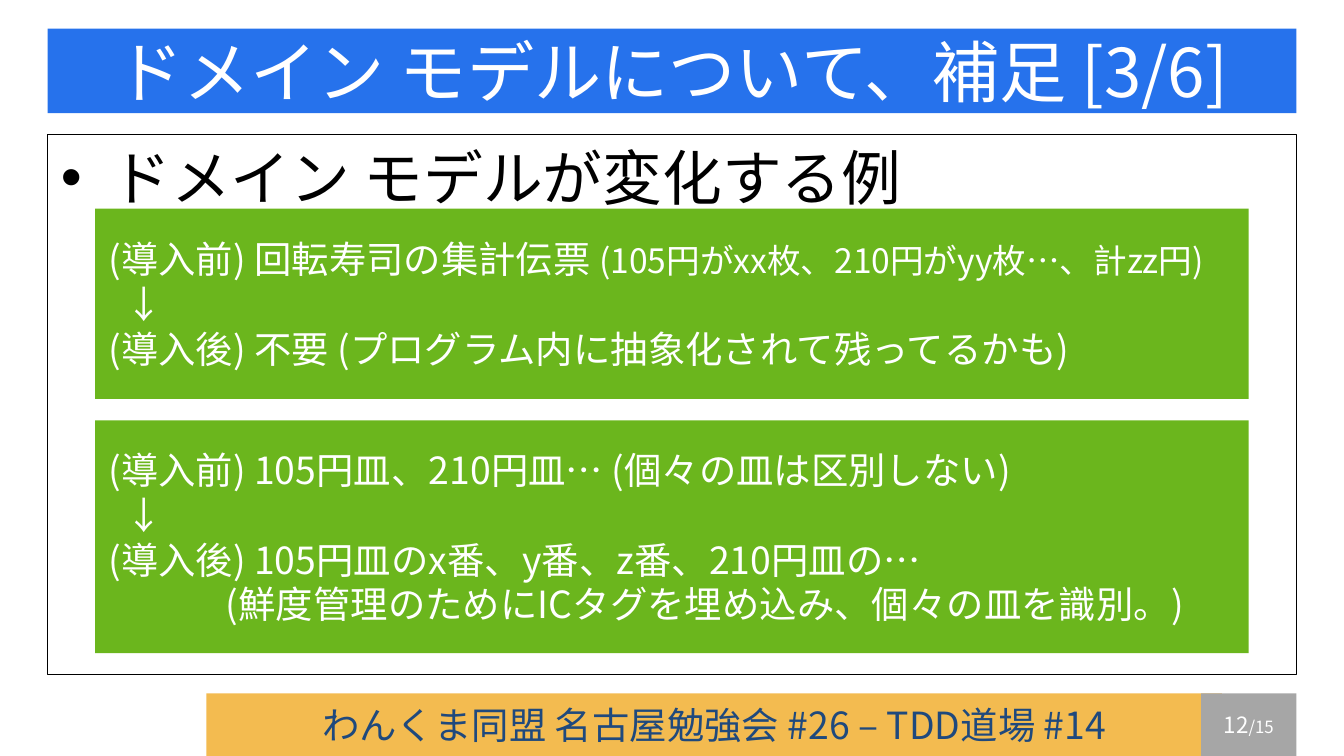
from lxml import etree
from pptx import Presentation
from pptx import util as u
from pptx.dml.color import RGBColor
from pptx.enum import shapes, text
from pptx.oxml.ns import qn

WHITE = RGBColor(0xFF, 0xFF, 0xFF)
BLACK = RGBColor(0x00, 0x00, 0x00)
BLUE = RGBColor(0x26, 0x72, 0xEC)
GREEN = RGBColor(0x6B, 0xB6, 0x1D)
ORANGE = RGBColor(0xF3, 0xBB, 0x50)
GRAY = RGBColor(0xA6, 0xA6, 0xA6)
NAVY = RGBColor(0x1F, 0x49, 0x7D)
CENTER = text.PP_ALIGN.CENTER
LEFT = text.PP_ALIGN.LEFT


class SlideBuilder:
    font_name = "Noto Sans CJK JP"

    def __init__(self, slide):
        self.slide = slide

    def box(self, left, top, width, height, fill=None, line=None, anchor=text.MSO_ANCHOR.MIDDLE):
        bounds = [u.Pt(value) for value in (left, top, width, height)]
        shape = self.slide.shapes.add_shape(shapes.MSO_SHAPE.RECTANGLE, *bounds)
        shape.shadow.inherit = False
        if fill is None:
            shape.fill.background()
        else:
            shape.fill.solid()
            shape.fill.fore_color.rgb = fill
        if line is None:
            shape.line.fill.background()
        else:
            shape.line.color.rgb = line
            shape.line.width = u.Pt(0.75)
        frame = shape.text_frame
        for name, value in {"word_wrap": True, "vertical_anchor": anchor}.items():
            setattr(frame, name, value)
        return frame

    def paragraph(self, frame, runs, color=WHITE, align=LEFT, indent=0, bullet=None):
        first = frame.paragraphs[0]
        paragraph = first if not first.runs else frame.add_paragraph()
        paragraph.alignment = align
        properties = paragraph._p.get_or_add_pPr()
        properties.set("marL", str(u.Pt(indent)))
        if bullet:
            properties.set("indent", str(-u.Pt(indent)))
            etree.SubElement(properties, qn("a:buFont"), typeface="Arial")
            etree.SubElement(properties, qn("a:buChar"), char=bullet)
        for content, size in runs:
            run = paragraph.add_run()
            run.text = content
            run.font.color.rgb = color
            for name, value in {"name": self.font_name, "size": u.Pt(size)}.items():
                setattr(run.font, name, value)
            etree.SubElement(run._r.get_or_add_rPr(), qn("a:ea"), typeface=self.font_name)

    def banner(self, bounds, fill, runs, color=WHITE):
        self.paragraph(self.box(*bounds, fill), runs, color, CENTER)

    def example(self, top, height, paragraphs):
        frame = self.box(51, top, 618, height, GREEN)
        for indent, runs in paragraphs:
            self.paragraph(frame, runs, indent=indent)


def main():
    presentation = Presentation()
    presentation.slide_width = u.Pt(720)
    presentation.slide_height = u.Pt(405)
    builder = SlideBuilder(presentation.slides.add_slide(presentation.slide_layouts[6]))

    builder.banner((110.6, 371.5, 544, 33.5), ORANGE,
                   [("わんくま同盟 名古屋勉強会 #26 – TDD道場 #14", 20)], NAVY)
    builder.banner((643.5, 371.5, 51, 33.5), GRAY, [("12", 12), ("/15", 9)])
    builder.banner((25.5, 15.3, 669, 45.3), BLUE, [("ドメイン モデルについて、補足 [3/6]", 36)])

    body = builder.box(25.5, 72, 669, 289.3, line=BLACK, anchor=text.MSO_ANCHOR.TOP)
    builder.paragraph(body, [("ドメイン モデルが変化する例", 32)], BLACK, indent=27, bullet="•")

    arrow = (9, [("↓", 20)])
    builder.example(111.8, 102, [
        (0, [("(導入前) 回転寿司の集計伝票 ", 20), ("(105円がxx枚、210円がyy枚…、計zz円)", 18)]),
        arrow,
        (0, [("(導入後) 不要 (プログラム内に抽象化されて残ってるかも)", 20)]),
    ])
    builder.example(225.3, 124.6, [
        (0, [("(導入前) 105円皿、210円皿… (個々の皿は区別しない)", 20)]),
        arrow,
        (0, [("(導入後) 105円皿のx番、y番、z番、210円皿の…", 20)]),
        (63, [("(鮮度管理のためにICタグを埋め込み、個々の皿を識別。)", 20)]),
    ])
    presentation.save("out.pptx")


if __name__ == "__main__":
    main()
